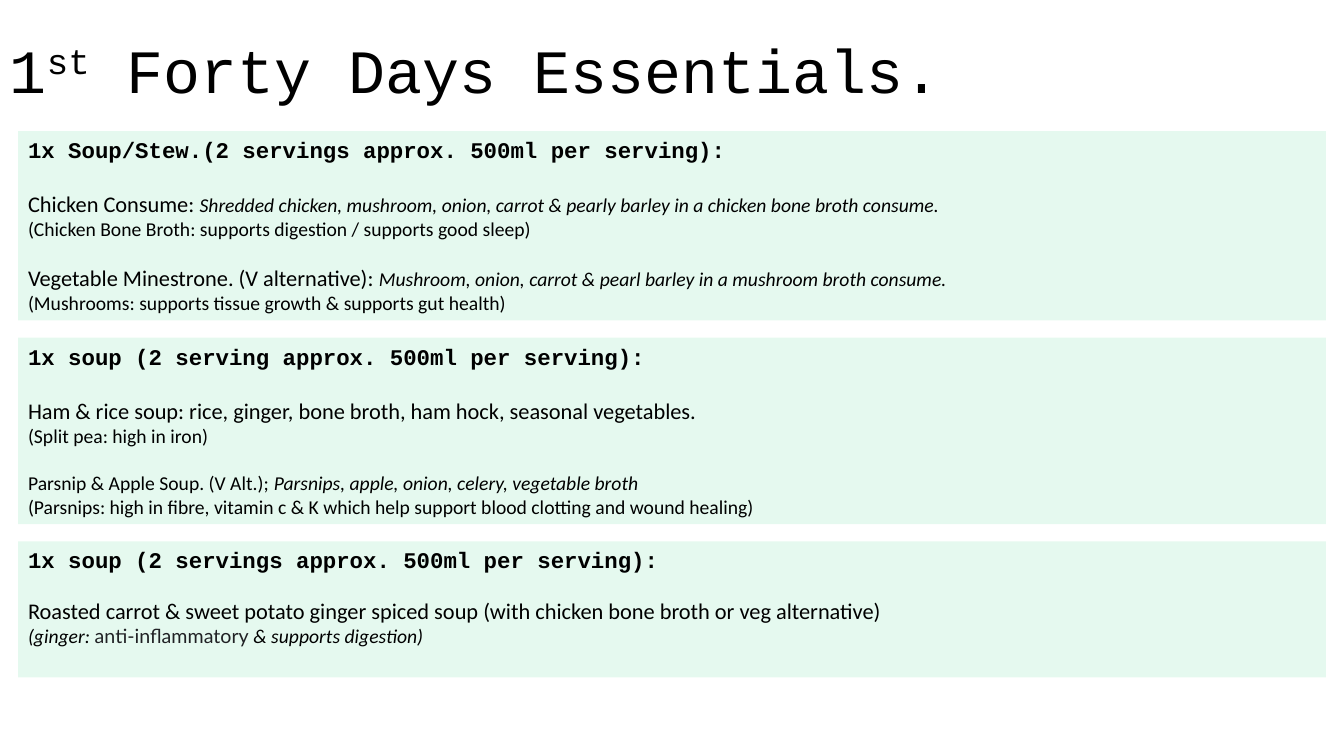
from dataclasses import dataclass

from lxml import etree
from pptx import Presentation
from pptx.dml.color import RGBColor
from pptx.enum import shapes, text
from pptx.oxml import ns
from pptx.util import Inches, Pt


@dataclass(frozen=True)
class Theme:
    ink: str = "000000"
    grey: str = "202124"
    green: str = "00CC66"
    green_alpha: int = 10
    mono: str = "Courier New"
    body: str = "Calibri"
    accent: str = "Lato"
    title: int = 44
    large: int = 16
    small: int = 14


theme = Theme()


def add_run(p, words, size=theme.small, font=theme.body, color=theme.ink,
            bold=False, italic=False, baseline=0):
    r = p.add_run()
    r.text = words
    r.font.size = Pt(size)
    r.font.name = font
    r.font.color.rgb = RGBColor.from_string(color)
    r.font.bold = bold
    r.font.italic = italic
    if baseline:
        r._r.get_or_add_rPr().set("baseline", str(baseline * 1000))


large = dict(size=theme.large)
italic = dict(italic=True)
heading = dict(size=theme.large, font=theme.mono, bold=True)
title = dict(size=theme.title, font=theme.mono)

title_runs = [
    ("1", title),
    ("st", dict(title, baseline=30)),
    (" Forty Days Essentials.", title),
]

panels = [
    (1.88, [
        (0, [("1x Soup/Stew.(2 servings approx. 500ml per serving):", heading)]),
        (19.5, [
            ("Chicken Consume: ", large),
            ("Shredded chicken, mushroom, onion, carrot & pearly barley in a chicken bone broth consume.", italic),
        ]),
        (0, [("(Chicken Bone Broth: supports digestion / supports good sleep)", {})]),
        (17, [
            ("Vegetable Minestrone. (V alternative): ", large),
            ("Mushroom, onion, carrot & pearl barley in a mushroom broth consume.", italic),
        ]),
        (0, [("(Mushrooms: supports tissue growth & supports gut health)", {})]),
    ]),
    (1.85, [
        (0, [("1x soup (2 serving approx. 500ml per serving):", heading)]),
        (19.5, [("Ham & rice soup: rice, ginger, bone broth, ham hock, seasonal vegetables.", large)]),
        (0, [("(Split pea: high in iron)", {})]),
        (17, [
            ("Parsnip & Apple Soup. (V Alt.); ", {}),
            ("Parsnips, apple, onion, celery, vegetable broth", italic),
        ]),
        (0, [("(Parsnips: high in fibre, vitamin c & K which help support blood clotting and wound healing)", {})]),
    ]),
    (1.35, [
        (0, [("1x soup (2 servings approx. 500ml per serving):", heading)]),
        (17, [("Roasted carrot & sweet potato ginger spiced soup (with chicken bone broth or veg alternative)", large)]),
        (0, [
            ("(ginger: ", italic),
            ("anti-inflammatory", dict(font=theme.accent, color=theme.grey)),
            (" & supports digestion)", italic),
        ]),
    ]),
]

prs = Presentation()
prs.slide_width = Inches(13.33)
prs.slide_height = Inches(7.5)
s = prs.slides.add_slide(prs.slide_layouts[6])

sp = s.shapes.add_textbox(Inches(0), Inches(0), Inches(11.5), Inches(1.45))
tf = sp.text_frame
tf.word_wrap = True
tf.vertical_anchor = text.MSO_ANCHOR.MIDDLE
p = tf.paragraphs[0]
p.line_spacing = 0.9
for words, style in title_runs:
    add_run(p, words, **style)

top = 1.3
gap = 0.17
for height, lines in panels:
    sp = s.shapes.add_shape(shapes.MSO_SHAPE.RECTANGLE, Inches(0.18), Inches(top),
                            Inches(12.97), Inches(height))
    sp.shadow.inherit = False
    sp.line.fill.background()
    sp.fill.solid()
    sp.fill.fore_color.rgb = RGBColor.from_string(theme.green)
    color = sp._element.spPr.find(ns.qn("a:solidFill"))[0]
    etree.SubElement(color, ns.qn("a:alpha"), val=str(theme.green_alpha * 1000))
    tf = sp.text_frame
    tf.word_wrap = True
    tf.vertical_anchor = text.MSO_ANCHOR.TOP
    for i, (space, runs) in enumerate(lines):
        p = tf.add_paragraph() if i else tf.paragraphs[0]
        p.alignment = text.PP_ALIGN.LEFT
        p.space_before = Pt(space)
        for words, style in runs:
            add_run(p, words, **style)
    top += height + gap

prs.save("out.pptx")
